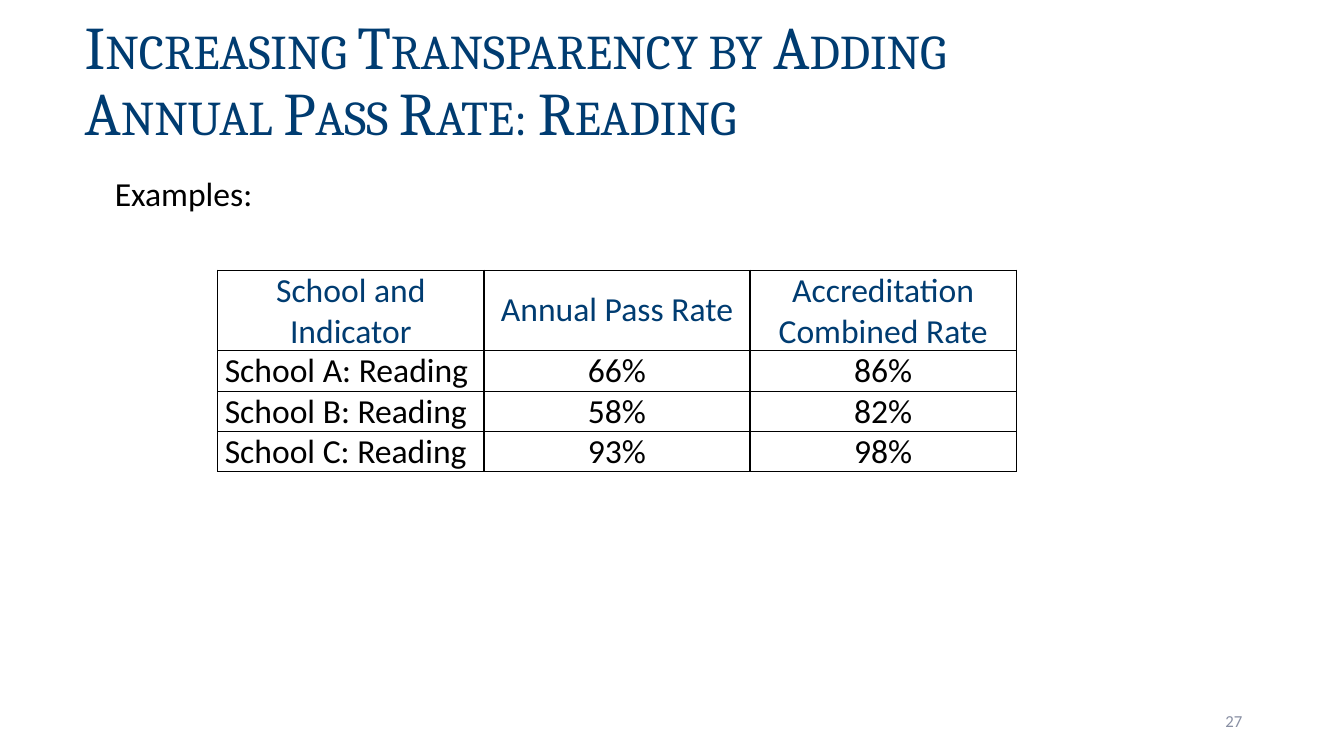
"""Build the slide on annual pass rates in reading."""
from lxml.etree import SubElement
from pptx import Presentation
from pptx.dml.color import RGBColor
from pptx.enum.text import MSO_ANCHOR, PP_ALIGN
from pptx.oxml.ns import qn
from pptx.util import Inches, Pt

TITLE = "Increasing Transparency by Adding\vAnnual Pass Rate: Reading"
INTRO = "Examples:"
PAGE = "27"
ROWS = [
    ("School and Indicator", "Annual Pass Rate", "Accreditation Combined Rate"),
    ("School A: Reading", "66%", "86%"),
    ("School B: Reading", "58%", "82%"),
    ("School C: Reading", "93%", "98%"),
]
NAVY, BLACK, GREY = "003C71", "000000", "888FA3"
COL_WIDTH, HEAD_HEIGHT, ROW_HEIGHT = 2.64, 0.76, 0.38


def write(tf, text, size, color, font="Calibri", align=PP_ALIGN.LEFT):
    tf.text = text
    tf.word_wrap = True
    p = tf.paragraphs[0]
    p.alignment = align
    for r in p.runs:
        r.font.size = Pt(size)
        r.font.name = font
        r.font.color.rgb = RGBColor.from_string(color)
    return p


def add_text(s, box, anchor, *args, **kwargs):
    tf = s.shapes.add_textbox(*map(Inches, box)).text_frame
    tf.vertical_anchor = anchor
    return tf, write(tf, *args, **kwargs)


def add_borders(cell):
    tc_pr = cell._tc.get_or_add_tcPr()
    for i, side in enumerate(("lnL", "lnR", "lnT", "lnB")):
        ln = SubElement(tc_pr, qn(f"a:{side}"), w=str(Pt(1)))
        fill = SubElement(ln, qn("a:solidFill"))
        SubElement(fill, qn("a:srgbClr"), val=BLACK)
        tc_pr.insert(i, ln)


def add_rates(s):
    cols = len(ROWS[0])
    height = HEAD_HEIGHT + ROW_HEIGHT * (len(ROWS) - 1)
    table = s.shapes.add_table(len(ROWS), cols, Inches(2.16), Inches(2.68),
                               Inches(COL_WIDTH * cols), Inches(height)).table
    for i, row in enumerate(ROWS):
        table.rows[i].height = Inches(ROW_HEIGHT if i else HEAD_HEIGHT)
        for j, text in enumerate(row):
            cell = table.cell(i, j)
            cell.margin_left = cell.margin_right = Inches(0.07)
            cell.margin_top = cell.margin_bottom = 0
            cell.vertical_anchor = MSO_ANCHOR.MIDDLE
            cell.fill.background()
            add_borders(cell)
            is_name = i > 0 and j == 0
            p = write(cell.text_frame, text, 24, BLACK if i else NAVY,
                      align=PP_ALIGN.LEFT if is_name else PP_ALIGN.CENTER)
            for r in p.runs:
                r.font.bold = False


def main():
    prs = Presentation()
    prs.slide_width, prs.slide_height = Inches(13.33), Inches(7.5)
    s = prs.slides.add_slide(prs.slide_layouts[6])

    tf, p = add_text(s, (-0.06, 0.07, 13.33, 1.45), MSO_ANCHOR.BOTTOM,
                     TITLE, 43.2, NAVY, font="Cambria")
    tf.margin_left = Inches(0.9)
    p.line_spacing = 0.9
    for r in p.runs:
        r.font._element.set("cap", "small")

    add_text(s, (9.42, 6.95, 3, 0.4), MSO_ANCHOR.MIDDLE,
             PAGE, 12, GREY, align=PP_ALIGN.RIGHT)
    add_rates(s)

    tf, p = add_text(s, (0.92, 1.71, 11.5, 0.58), MSO_ANCHOR.TOP,
                     INTRO, 24, BLACK)
    p.line_spacing = 0.9
    p.space_before = Pt(10)
    p._p.get_or_add_pPr().set("marL", str(Inches(0.12)))

    prs.save("out.pptx")


if __name__ == "__main__":
    main()
